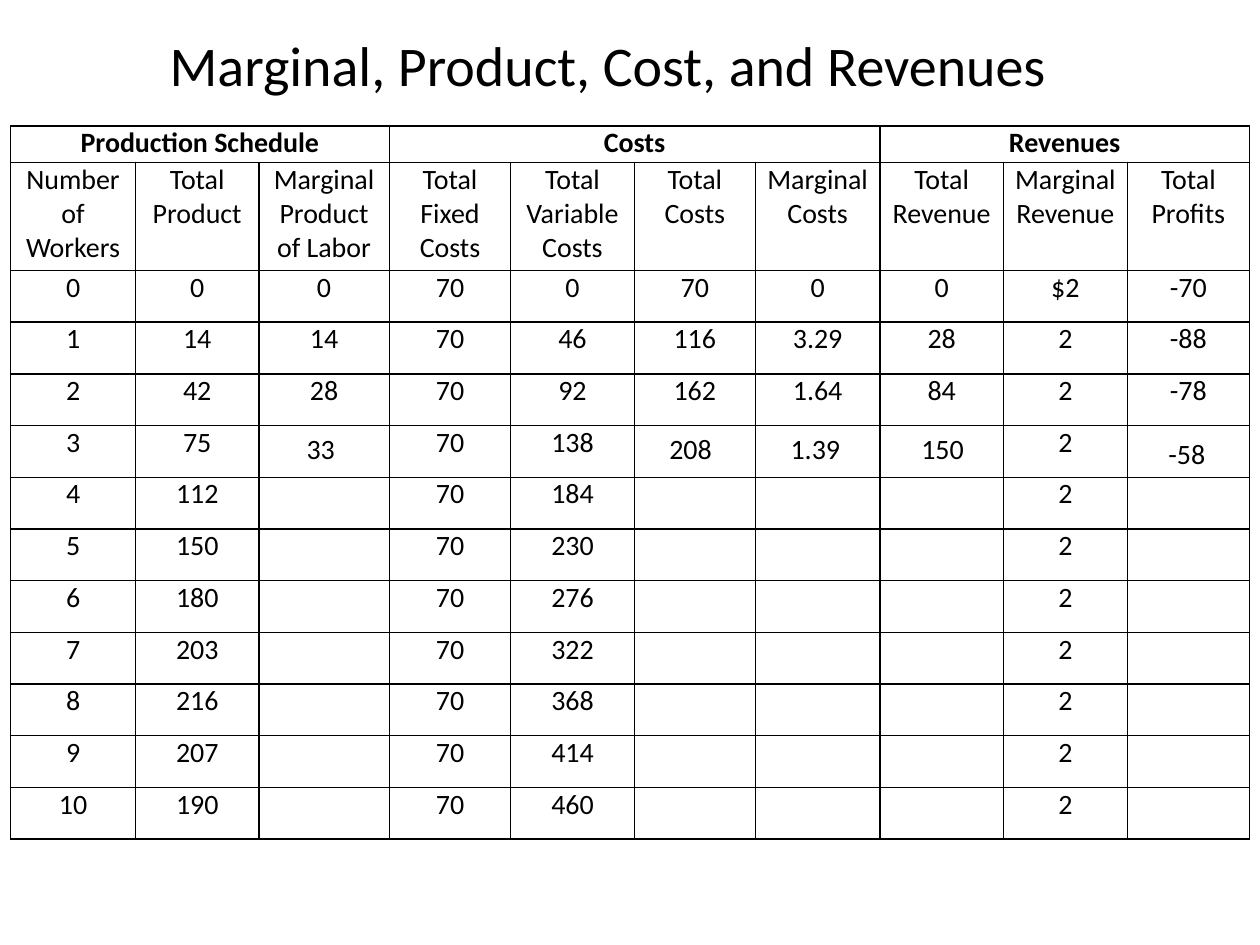
import pptx
import pptx.dml.color
import pptx.enum.text
import pptx.oxml
import pptx.oxml.ns
import pptx.util

Pt = pptx.util.Pt
TEXT = pptx.enum.text
INK = {"text": "000000", "rule": "000000"}
SIZE = 16
WIDTHS = [71.5, 70.4, 74.6, 69.4, 70.6, 69.2, 71.2, 70.6, 70.8, 69.8]
HEIGHTS = [20.8, 61.8] + [29.56] * 11
GROUPS = [("Production Schedule", 0, 2), ("Costs", 3, 6), ("Revenues", 7, 9)]
HEADS = ["Number of Workers", "Total Product", "Marginal Product of Labor",
         "Total Fixed Costs", "Total Variable Costs", "Total Costs",
         "Marginal Costs", "Total Revenue", "Marginal Revenue", "Total Profits"]
OUTPUT = [0, 14, 42, 75, 112, 150, 180, 203, 216, 207, 190]
FIXED, STEP, PRICE = 70, 46, 2
# Marginal product, total costs, marginal costs, revenue, profits
SOLVED = [("0", "70", "0", "0", "-70"),
          ("14", "116", "3.29", "28", "-88"),
          ("28", "162", "1.64", "84", "-78")]
# Answers for three workers: text, left, top, width
LOOSE = [("33", 167.8, 243.2, 31), ("208", 375.1, 243.2, 39),
         ("1.39", 444.2, 243.2, 43.4), ("150", 519.1, 243.2, 39),
         ("-58", 660.2, 246.2, 36)]


def put(item, **vals):
    for name, val in vals.items():
        setattr(item, name, val)


def write(frame, text, size=SIZE, bold=False, align=TEXT.PP_ALIGN.CENTER):
    para = frame.paragraphs[0]
    para.alignment = align
    run = para.add_run()
    run.text = text
    put(run.font, name="Calibri", size=Pt(size), bold=bold)
    run.font.color.rgb = pptx.dml.color.RGBColor.from_string(INK["text"])


def rule(cell):
    """Draw a thin line on all four sides of a cell."""
    props = cell._tc.get_or_add_tcPr()
    for spot, side in enumerate("LRTB"):
        props.insert(spot, pptx.oxml.parse_xml(
            f'<a:ln{side} {pptx.oxml.ns.nsdecls("a")} w="12700"><a:solidFill>'
            f'<a:srgbClr val="{INK["rule"]}"/></a:solidFill></a:ln{side}>'))


def add_title(slide, text):
    title = slide.shapes.title
    put(title, left=Pt(89.7), top=Pt(13.7), width=Pt(546), height=Pt(46))
    put(title.text_frame, word_wrap=True, auto_size=TEXT.MSO_AUTO_SIZE.NONE,
        vertical_anchor=TEXT.MSO_ANCHOR.TOP)
    write(title.text_frame, text, 32, align=TEXT.PP_ALIGN.LEFT)


def add_label(slide, text, left, top, wide):
    """Place a one-line text that its box grows to fit."""
    box = slide.shapes.add_textbox(Pt(left), Pt(top), Pt(wide), Pt(26.6))
    put(box.text_frame, word_wrap=False,
        auto_size=TEXT.MSO_AUTO_SIZE.SHAPE_TO_FIT_TEXT)
    write(box.text_frame, text)


def make_rows():
    rows = [HEADS]
    for count, total in enumerate(OUTPUT):
        done = SOLVED[count] if count < len(SOLVED) else [""] * 5
        gain, cost, extra, sales, profit = done
        price = f"${PRICE}" if count == 0 else str(PRICE)
        rows.append([str(count), str(total), gain, str(FIXED),
                     str(STEP * count), cost, extra, sales, price, profit])
    return rows


def add_grid(slide):
    grid = slide.shapes.add_table(
        len(HEIGHTS), len(WIDTHS), Pt(6), Pt(72),
        Pt(sum(WIDTHS)), Pt(sum(HEIGHTS))).table
    put(grid, first_row=False, horz_banding=False)
    for col, wide in zip(grid.columns, WIDTHS):
        col.width = Pt(wide)
    for row, high in zip(grid.rows, HEIGHTS):
        row.height = Pt(high)
    for cell in grid.iter_cells():
        put(cell, margin_left=Pt(5), margin_right=Pt(5),
            margin_top=0, margin_bottom=0)
        cell.fill.background()
        rule(cell)
    for text, first, last in GROUPS:
        cell = grid.cell(0, first)
        cell.merge(grid.cell(0, last))
        write(cell.text_frame, text, bold=True)
    for r, row in enumerate(make_rows(), 1):
        for c, text in enumerate(row):
            if text:
                write(grid.cell(r, c).text_frame, text)


def main():
    deck = pptx.Presentation()
    put(deck, slide_width=Pt(720), slide_height=Pt(540))
    slide = deck.slides.add_slide(deck.slide_layouts[5])
    add_title(slide, "Marginal, Product, Cost, and Revenues")
    add_grid(slide)
    for label in LOOSE:
        add_label(slide, *label)
    deck.save("out.pptx")


if __name__ == "__main__":
    main()
